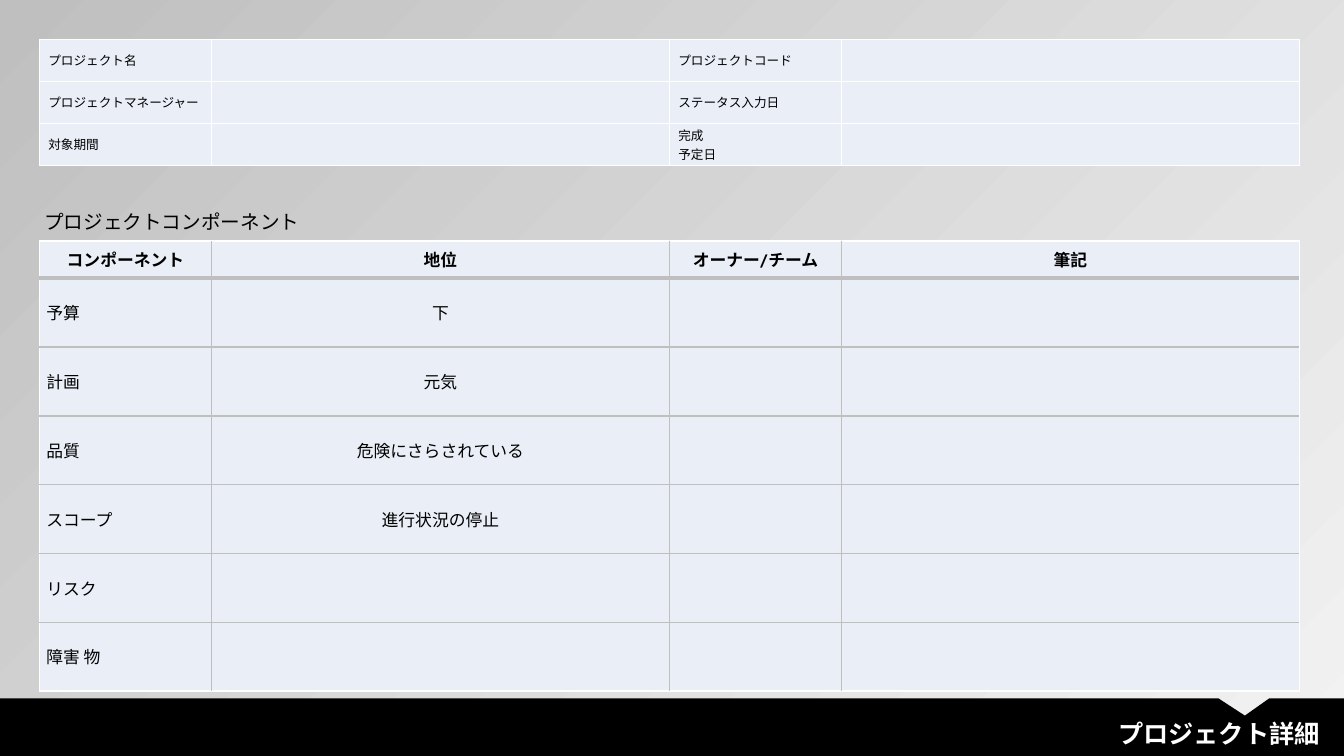
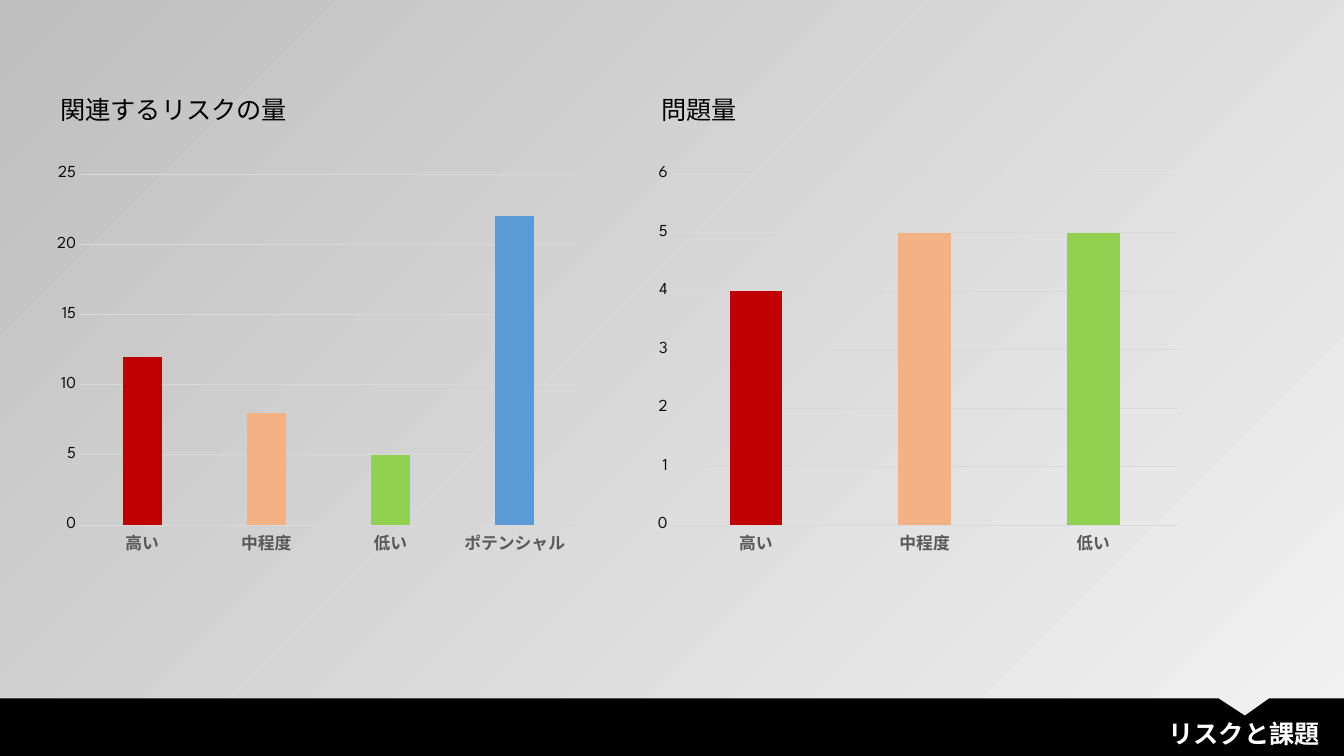
from lxml import etree
from pptx import Presentation
from pptx.chart.data import CategoryChartData
from pptx.dml.color import RGBColor
from pptx.enum.chart import XL_CHART_TYPE, XL_TICK_MARK
from pptx.enum.shapes import MSO_CONNECTOR
from pptx.enum.text import MSO_ANCHOR, PP_ALIGN
from pptx.oxml.ns import qn
from pptx.util import Inches, Pt

COLUMN = XL_CHART_TYPE.COLUMN_CLUSTERED
NO_TICK = XL_TICK_MARK.NONE
STRAIGHT = MSO_CONNECTOR.STRAIGHT
MIDDLE = MSO_ANCHOR.MIDDLE
LEFT, CENTER, RIGHT = PP_ALIGN.LEFT, PP_ALIGN.CENTER, PP_ALIGN.RIGHT

FONT = "League Spartan"
COLORS = {
    "light": "F2F2F2", "grey": "BFBFBF", "black": "000000", "white": "FFFFFF",
    "cell": "EAEFF7", "grid": "D9D9D9", "category": "595959", "value": "0D0D0D",
    "high": "C00000", "medium": "F4B183", "low": "92D050", "potential": "5B9BD5",
}
PAGE_COLUMNS, PAGE_ROWS = 133.33, 75
TABLE_LEFT = 3.9
TABLE_COLUMNS = [17.1, 45.4, 17.1, 45.4]
BAND_TOP = 69.3
NOTCH = [(120.9, 0), (123.5, 1.7), (125.9, 0)]

DETAILS = [
    ["プロジェクト名", "", "プロジェクトコード", ""],
    ["プロジェクトマネージャー", "", "ステータス入力日", ""],
    ["対象期間", "", "完成\v予定日", ""],
]
COMPONENTS = [
    ["コンポーネント", "地位", "オーナー/チーム", "筆記"],
    ["予算", "下", "", ""],
    ["計画", "元気", "", ""],
    ["品質", "危険にさらされている", "", ""],
    ["スコープ", "進行状況の停止", "", ""],
    ["リスク", "", "", ""],
    ["障害 物", "", "", ""],
]
CHARTS = [
    ("関連するリスクの量", {"高い": 12, "中程度": 8, "低い": 5, "ポテンシャル": 22}),
    ("問題量", {"高い": 4, "中程度": 5, "低い": 5}),
]


def grid(count):
    """Turn a count of tenth-inch grid units into a length."""
    return Inches(count / 10)


def color(name):
    """Look up a named colour."""
    return RGBColor.from_string(COLORS[name])


def style_font(font, size, name="black", bold=False):
    """Set face, size, colour and weight of a font."""
    font.name = FONT
    font.size = Pt(size)
    font.bold = bold
    font.color.rgb = color(name)


def add_text(page, box, text, size, name="black", bold=False, align=LEFT):
    """Place one line of text in a box of grid units."""
    frame = page.shapes.add_textbox(*map(grid, box)).text_frame
    frame.word_wrap = True
    para = frame.paragraphs[0]
    para.text = text
    para.alignment = align
    style_font(para.font, size, name, bold)


def add_rule(page, start, end, weight):
    """Draw a grey line between two grid points."""
    rule = page.shapes.add_connector(STRAIGHT, *map(grid, start + end))
    rule.line.color.rgb = color("grey")
    rule.line.width = Pt(weight)
    etree.SubElement(rule._element.spPr, qn("a:effectLst"))


def add_borders(cell):
    """Give a filled cell a white border on all four sides."""
    properties = cell._tc.get_or_add_tcPr()
    for index, side in enumerate(("lnL", "lnR", "lnT", "lnB")):
        line = etree.Element(qn(f"a:{side}"), w=str(Pt(1)))
        fill = etree.SubElement(line, qn("a:solidFill"))
        etree.SubElement(fill, qn("a:srgbClr"), val=COLORS["white"])
        properties.insert(index, line)


def add_grid_table(page, top, heights, rows, size, inset, header=False):
    """Build a four-column table, with a bold header and centred values if asked."""
    frame = page.shapes.add_table(
        len(rows), len(TABLE_COLUMNS), grid(TABLE_LEFT), grid(top),
        grid(sum(TABLE_COLUMNS)), grid(sum(heights)))
    table = frame.table
    table.first_row = table.horz_banding = False
    for column, width in zip(table.columns, TABLE_COLUMNS):
        column.width = grid(width)
    for row_index, (texts, height) in enumerate(zip(rows, heights)):
        table.rows[row_index].height = grid(height)
        for column_index, text in enumerate(texts):
            cell = table.cell(row_index, column_index)
            bold = header and row_index == 0
            centered = header and (bold or column_index > 0)
            cell.margin_left = 0 if centered else grid(inset)
            cell.margin_right = cell.margin_top = cell.margin_bottom = 0
            cell.vertical_anchor = MIDDLE
            cell.fill.solid()
            cell.fill.fore_color.rgb = color("cell")
            add_borders(cell)
            para = cell.text_frame.paragraphs[0]
            para.text = text
            para.alignment = CENTER if centered else LEFT
            style_font(para.font, size, bold=bold)


def add_table_rules(page, top, heights):
    """Draw grey rules over the inner edges of a table."""
    right = TABLE_LEFT + sum(TABLE_COLUMNS)
    for index in range(1, len(heights)):
        y = top + sum(heights[:index])
        add_rule(page, (TABLE_LEFT, y), (right, y), 2.5 if index == 1 else 1)
    for index in range(1, len(TABLE_COLUMNS)):
        x = TABLE_LEFT + sum(TABLE_COLUMNS[:index])
        add_rule(page, (x, top), (x, top + sum(heights)), 0.5)


def add_column_chart(page, left, title, values):
    """Place a titled column chart with one colour per category."""
    add_text(page, (left + 0.4, 8.9, 44.4, 4), title, 18)
    data = CategoryChartData()
    data.categories = list(values)
    data.add_series("Series 1", list(values.values()))
    box = map(grid, (left, 15.7, 53.7, 40.1))
    chart = page.shapes.add_chart(COLUMN, *box, data).chart
    chart.has_title = chart.has_legend = False
    style_font(chart.font, 10)

    plot = chart.plots[0]
    plot.gap_width, plot.overlap, plot.vary_by_categories = 219, -5, False
    series = plot.series[0]
    series.format.fill.solid()
    series.format.fill.fore_color.rgb = color("potential")
    for index, name in zip(range(len(values)), ("high", "medium", "low")):
        fill = series.points[index].format.fill
        fill.solid()
        fill.fore_color.rgb = color(name)

    categories, scale = chart.category_axis, chart.value_axis
    for axis in (categories, scale):
        axis.major_tick_mark = axis.minor_tick_mark = NO_TICK
    style_font(categories.tick_labels.font, 12, "category", True)
    style_font(scale.tick_labels.font, 12, "value")
    scale.format.line.fill.background()
    for line in (categories.format.line, scale.major_gridlines.format.line):
        line.color.rgb = color("grid")
        line.width = Pt(0.75)


def add_band(page, title):
    """Draw the notched black footer band with its title."""
    depth = PAGE_ROWS - BAND_TOP
    outline = NOTCH + [(PAGE_COLUMNS, 0), (PAGE_COLUMNS, depth), (0, depth)]
    builder = page.shapes.build_freeform(0, grid(BAND_TOP))
    builder.add_line_segments(
        [(grid(x), grid(BAND_TOP + y)) for x, y in outline])
    band = builder.convert_to_shape()
    band.shadow.inherit = False
    band.fill.solid()
    band.fill.fore_color.rgb = color("black")
    band.line.fill.background()
    add_text(page, (41.4, BAND_TOP + 1.5, 90.5, 4), title, 18, "white", True, RIGHT)


def add_page(deck):
    """Add a blank page with the grey diagonal gradient."""
    page = deck.slides.add_slide(deck.slide_layouts[6])
    fill = page.background.fill
    fill.gradient()
    fill.gradient_angle = 135
    for stop, name, position in zip(fill.gradient_stops, ("light", "grey"), (0, 1)):
        stop.color.rgb = color(name)
        stop.position = position
    return page


def build_details(deck):
    """Build the page of project details and components."""
    page = add_page(deck)
    top, heights = 23.9, [3.7] + [6.83] * 6
    add_grid_table(page, 3.9, [4.17] * 3, DETAILS, 9, 0.9)
    add_grid_table(page, top, heights, COMPONENTS, 12, 0.7, header=True)
    add_text(page, (3.4, 20.3, 36.5, 3.4), "プロジェクトコンポーネント", 14)
    add_table_rules(page, top, heights)
    add_band(page, "プロジェクト詳細")


def build_risks(deck):
    """Build the page of risk and issue charts."""
    page = add_page(deck)
    for index, (title, values) in enumerate(CHARTS):
        add_column_chart(page, 4.6 + index * 59.6, title, values)
    add_band(page, "リスクと課題")


def main():
    """Build and save the deck."""
    deck = Presentation()
    deck.slide_width, deck.slide_height = grid(PAGE_COLUMNS), grid(PAGE_ROWS)
    build_details(deck)
    build_risks(deck)
    deck.save("out.pptx")


if __name__ == "__main__":
    main()
